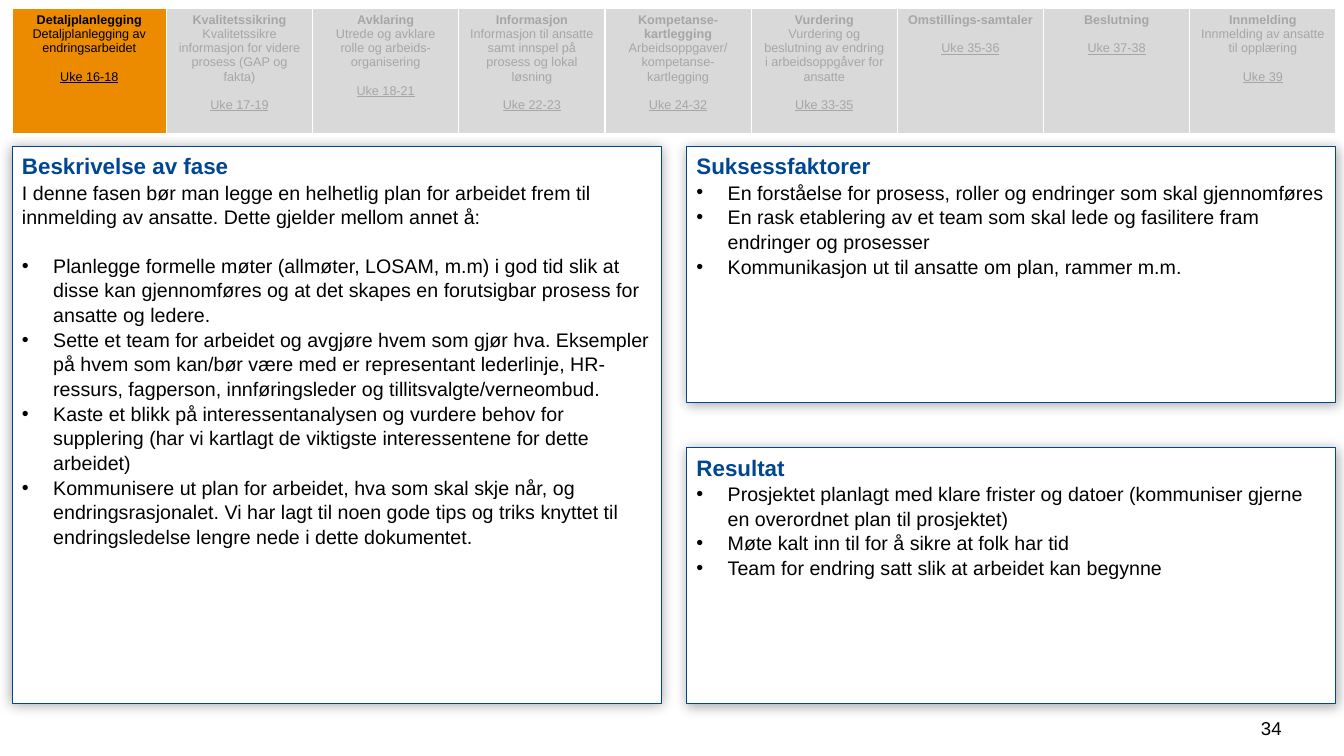
import pptx
import pptx.dml.color
import pptx.enum.shapes
import pptx.enum.text
import pptx.oxml
import pptx.util
from dataclasses import dataclass

ALIGN = pptx.enum.text.PP_ALIGN
ANCHOR = pptx.enum.text.MSO_ANCHOR
RECT = pptx.enum.shapes.MSO_SHAPE.RECTANGLE
NS = 'xmlns:a="http://schemas.openxmlformats.org/drawingml/2006/main"'


@dataclass
class Theme:
    font: str = "Arial"
    blue: str = "014693"
    orange: str = "ED8B00"
    grey: str = "D9D9D9"
    muted: str = "A6A6A6"
    black: str = "000000"
    white: str = "FFFFFF"
    heading: float = 16
    body: float = 14
    phase: float = 9
    number: float = 13.3
    indent: float = 0.31


T = Theme()

# Slide grid: two equal columns, the right one split into two equal rows
WIDTH, HEIGHT = 13.33, 7.5
MARGIN, GUTTER, ROW_GAP = 0.12, 0.25, 0.45
COL = 6.44
TABLE_TOP, TABLE_H = 0.08, 1.26
PANEL_TOP, PANEL_H = 1.45, 5.53
HALF_H = (PANEL_H - ROW_GAP) / 2
RIGHT = MARGIN + COL + GUTTER
FIRST_PHASE_W = 1.53

# Phase name, description, weeks
PHASES = [
    ("Detaljplanlegging", "Detaljplanlegging av endringsarbeidet", "Uke 16-18"),
    ("Kvalitetssikring", "Kvalitetssikre informasjon for videre prosess (GAP og fakta)", "Uke 17-19"),
    ("Avklaring", "Utrede og avklare rolle og arbeids-organisering", "Uke 18-21"),
    ("Informasjon", "Informasjon til ansatte samt innspel på prosess og lokal løsning", "Uke 22-23"),
    ("Kompetanse-kartlegging", "Arbeidsoppgaver/\vkompetanse-kartlegging", "Uke 24-32"),
    ("Vurdering", "Vurdering og beslutning av endring i arbeidsoppgåver for ansatte", "Uke 33-35"),
    ("Omstillings-samtaler", "", "Uke 35-36"),
    ("Beslutning", "", "Uke 37-38"),
    ("Innmelding", "Innmelding av ansatte til opplæring", "Uke 39"),
]
ACTIVE = 0

DESCRIPTION_INTRO = ("I denne fasen bør man legge en helhetlig plan for arbeidet frem til "
                     "innmelding av ansatte. Dette gjelder mellom annet å:")
DESCRIPTION = [
    "Planlegge formelle møter (allmøter, LOSAM, m.m) i god tid slik at disse kan "
    "gjennomføres og at det skapes en forutsigbar prosess for ansatte og ledere.",
    "Sette et team for arbeidet og avgjøre hvem som gjør hva. Eksempler på hvem som "
    "kan/bør være med er representant lederlinje, HR-ressurs, fagperson, "
    "innføringsleder og tillitsvalgte/verneombud.",
    "Kaste et blikk på interessentanalysen og vurdere behov for supplering "
    "(har vi kartlagt de viktigste interessentene for dette arbeidet)",
    "Kommunisere ut plan for arbeidet, hva som skal skje når, og endringsrasjonalet. "
    "Vi har lagt til noen gode tips og triks knyttet til endringsledelse lengre nede "
    "i dette dokumentet.",
]
SUCCESS = [
    "En forståelse for prosess, roller og endringer som skal gjennomføres",
    "En rask etablering av et team som skal lede og fasilitere fram endringer og prosesser",
    "Kommunikasjon ut til ansatte om plan, rammer m.m.",
]
RESULT = [
    "Prosjektet planlagt med klare frister og datoer (kommuniser gjerne en overordnet "
    "plan til prosjektet)",
    "Møte kalt inn til for å sikre at folk har tid",
    "Team for endring satt slik at arbeidet kan begynne",
]


def rgb(value):
    return pptx.dml.color.RGBColor.from_string(value)


def inches(*values):
    return [pptx.util.Inches(v) for v in values]


def set_attrs(obj, values):
    for name, value in values.items():
        setattr(obj, name, value)


def add_paragraph(tf, text, size, color, font=None, para=None, bullet=False):
    """Fill the empty first paragraph, or append a new one."""
    p = tf.paragraphs[0] if not tf.text else tf.add_paragraph()
    if bullet:
        pPr = p._p.get_or_add_pPr()
        indent = pptx.util.Inches(T.indent)
        pPr.set("marL", str(indent))
        pPr.set("indent", str(-indent))
        pPr.append(pptx.oxml.parse_xml(f'<a:buFont {NS} typeface="{T.font}"/>'))
        pPr.append(pptx.oxml.parse_xml(f'<a:buChar {NS} char="•"/>'))
    set_attrs(p, para or {})
    p.text = text
    for r in p.runs:
        set_attrs(r.font, {"name": T.font, "size": pptx.util.Pt(size), "bold": False, **(font or {})})
        r.font.color.rgb = rgb(color)


def add_shadow(s):
    s.shadow.inherit = False
    s._element.spPr.find(pptx.oxml.ns.qn("a:effectLst")).append(pptx.oxml.parse_xml(
        f'<a:outerShdw {NS} blurRad="{pptx.util.Pt(9)}" dist="{pptx.util.Pt(1)}" dir="5400000" '
        f'rotWithShape="0"><a:srgbClr val="{T.black}"><a:alpha val="35000"/></a:srgbClr></a:outerShdw>'))


def add_borders(cell):
    tcPr = cell._tc.get_or_add_tcPr()
    for side, width in {"L": 1, "R": 1, "T": 1, "B": 3}.items():
        tcPr.append(pptx.oxml.parse_xml(
            f'<a:ln{side} {NS} w="{pptx.util.Pt(width)}"><a:solidFill>'
            f'<a:srgbClr val="{T.white}"/></a:solidFill></a:ln{side}>'))


def phase_bar(slide, x, y, w, h):
    """One-row table of phases with the active one highlighted."""
    table = slide.shapes.add_table(1, len(PHASES), *inches(x, y, w, h)).table
    set_attrs(table, {"first_row": False, "horz_banding": False})
    other_w = (w - FIRST_PHASE_W) / (len(PHASES) - 1)
    for i, (name, text, weeks) in enumerate(PHASES):
        active = i == ACTIVE
        table.columns[i].width = pptx.util.Inches(FIRST_PHASE_W if i == 0 else other_w)
        cell = table.cell(0, i)
        add_borders(cell)
        cell.fill.solid()
        cell.fill.fore_color.rgb = rgb(T.orange if active else T.grey)
        color = T.black if active else T.muted
        center = {"alignment": ALIGN.CENTER}
        gap = {**center, "space_before": pptx.util.Pt(10.2)}
        add_paragraph(cell.text_frame, name, T.phase, color, {"bold": True}, center)
        if text:
            add_paragraph(cell.text_frame, text, T.phase, color, para=center)
        add_paragraph(cell.text_frame, weeks, T.phase, color, {"underline": True}, gap)


def panel(slide, x, y, w, h, heading, bullets, intro=None):
    """Framed box with a heading, an optional lead-in and a bullet list."""
    s = slide.shapes.add_shape(RECT, *inches(x, y, w, h))
    s.fill.solid()
    s.fill.fore_color.rgb = rgb(T.white)
    s.line.color.rgb = rgb(T.blue)
    s.line.width = pptx.util.Pt(0.75)
    add_shadow(s)
    tf = s.text_frame
    set_attrs(tf, {"word_wrap": True, "vertical_anchor": ANCHOR.TOP})
    para = {"alignment": ALIGN.LEFT, "line_spacing": 1.05}
    add_paragraph(tf, heading, T.heading, T.blue, {"bold": True}, para)
    if intro:
        add_paragraph(tf, intro, T.body, T.black, para=para)
    for i, text in enumerate(bullets):
        gap = {"space_before": pptx.util.Pt(16.9)} if intro and i == 0 else {}
        add_paragraph(tf, text, T.body, T.black, para={**para, **gap}, bullet=True)


def page_number(slide, x, y, w, h, number):
    tf = slide.shapes.add_textbox(*inches(x, y, w, h)).text_frame
    set_attrs(tf, {"word_wrap": True, "vertical_anchor": ANCHOR.MIDDLE})
    add_paragraph(tf, number, T.number, T.black, para={"alignment": ALIGN.CENTER})


def main():
    prs = pptx.Presentation()
    prs.slide_width, prs.slide_height = inches(WIDTH, HEIGHT)
    slide = prs.slides.add_slide(prs.slide_layouts[6])
    page_number(slide, 12.36, 7.02, 0.5, 0.4, "34")
    panel(slide, MARGIN, PANEL_TOP, COL, PANEL_H, "Beskrivelse av fase", DESCRIPTION, DESCRIPTION_INTRO)
    for row, (heading, bullets) in enumerate([("Suksessfaktorer", SUCCESS), ("Resultat", RESULT)]):
        y = PANEL_TOP + row * (HALF_H + ROW_GAP)
        panel(slide, RIGHT, y, COL, HALF_H, heading, bullets)
    phase_bar(slide, MARGIN, TABLE_TOP, 2 * COL + GUTTER, TABLE_H)
    prs.save("out.pptx")


if __name__ == "__main__":
    main()
